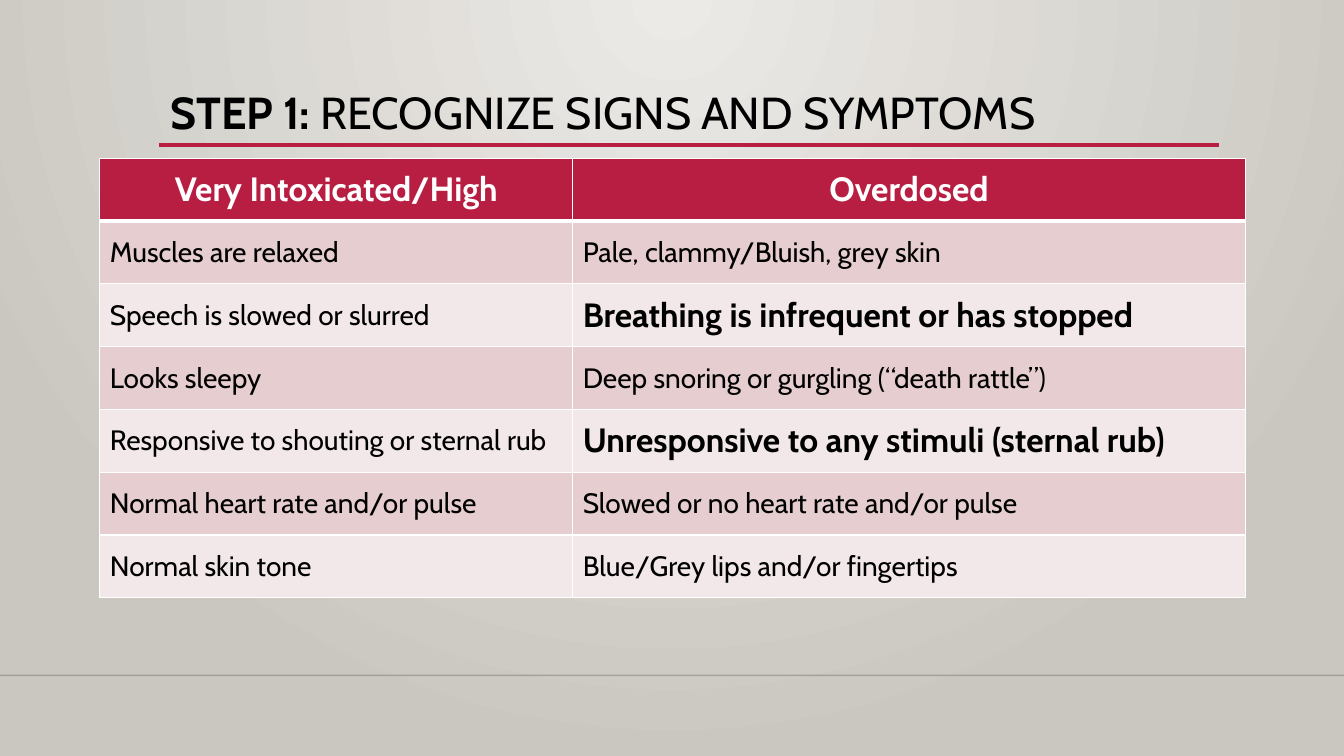
from lxml import etree
from pptx import Presentation
from pptx.dml.color import RGBColor
from pptx.enum import shapes, text
from pptx.oxml import ns
from pptx.util import Inches, Pt

FONT = "Cabin"
CRIMSON = "B71E42"
WHITE = "FFFFFF"
BLACK = "000000"
BAND_FILLS = ["E6CDCF", "F3E8E9"]
COLUMN_WIDTHS = [4.69, 6.67]
HEADINGS = ["Very Intoxicated/High", "Overdosed"]
SIGNS = [
    ("Muscles are relaxed", "Pale, clammy/Bluish, grey skin"),
    ("Speech is slowed or slurred", "Breathing is infrequent or has stopped"),
    ("Looks sleepy", "Deep snoring or gurgling (“death rattle”)"),
    ("Responsive to shouting or sternal rub", "Unresponsive to any stimuli (sternal rub)"),
    ("Normal heart rate and/or pulse", "Slowed or no heart rate and/or pulse"),
    ("Normal skin tone", "Blue/Grey lips and/or fingertips"),
]
CRITICAL_SIGNS = {SIGNS[1][1], SIGNS[3][1]}


def color(value):
    return RGBColor.from_string(value)


def format_font(font, size, value, bold=False):
    font.name = FONT
    font.size = Pt(size)
    font.bold = bold
    font.color.rgb = color(value)


def set_background(slide):
    fill = slide.background.fill
    fill.gradient()
    for stop, value in zip(fill.gradient_stops, ["ECEAE7", "CAC7C1"]):
        stop.color.rgb = color(value)
    gradient = next(slide.element.iter(ns.qn("a:gradFill")))
    gradient.remove(gradient.find(ns.qn("a:lin")))
    circle = etree.SubElement(gradient, ns.qn("a:path"), path="circle")
    etree.SubElement(circle, ns.qn("a:fillToRect"), l="43000", t="0", r="43000", b="100000")


def add_rule(slide, left, right, top, value, width, opacity=100):
    rule = slide.shapes.add_connector(
        shapes.MSO_CONNECTOR.STRAIGHT, Inches(left), Inches(top), Inches(right), Inches(top)
    )
    rule.line.color.rgb = color(value)
    rule.line.width = Pt(width)
    properties = rule._element.spPr
    if opacity < 100:
        solid = next(properties.iter(ns.qn("a:srgbClr")))
        etree.SubElement(solid, ns.qn("a:alpha"), val=str(opacity * 1000))
    etree.SubElement(properties, ns.qn("a:effectLst"))


def add_title(slide, step, heading):
    box = slide.shapes.add_textbox(Inches(1.59), Inches(0.52), Inches(10.5), Inches(0.91))
    frame = box.text_frame
    frame.word_wrap = True
    frame.vertical_anchor = text.MSO_ANCHOR.BOTTOM
    paragraph = frame.paragraphs[0]
    paragraph.line_spacing = 0.9
    for words, bold in [(step, True), (heading, False)]:
        run = paragraph.add_run()
        run.text = words
        format_font(run.font, 32, BLACK, bold)


def set_borders(cell, bottom_width):
    properties = cell._tc.get_or_add_tcPr()
    widths = {"a:lnL": 1, "a:lnR": 1, "a:lnT": 1, "a:lnB": bottom_width}
    for index, (tag, width) in enumerate(widths.items()):
        border = etree.Element(ns.qn(tag), w=str(Pt(width)))
        solid = etree.SubElement(border, ns.qn("a:solidFill"))
        etree.SubElement(solid, ns.qn("a:srgbClr"), val=WHITE)
        properties.insert(index, border)


def fill_cell(cell, words, fill, size, value, bold, bottom_width=1):
    cell.fill.solid()
    cell.fill.fore_color.rgb = color(fill)
    set_borders(cell, bottom_width)
    cell.vertical_anchor = text.MSO_ANCHOR.MIDDLE
    cell.text_frame.text = words
    format_font(cell.text_frame.paragraphs[0].runs[0].font, size, value, bold)


def add_signs_table(slide):
    table = slide.shapes.add_table(
        len(SIGNS) + 1, len(HEADINGS), Inches(0.99), Inches(1.57),
        Inches(sum(COLUMN_WIDTHS)), Inches(4.36)
    ).table
    table.first_row = True
    table.horz_banding = False
    for column, width in zip(table.columns, COLUMN_WIDTHS):
        column.width = Inches(width)
    for column, heading in enumerate(HEADINGS):
        cell = table.cell(0, column)
        fill_cell(cell, heading, CRIMSON, 24, WHITE, True, bottom_width=3)
        cell.text_frame.paragraphs[0].alignment = text.PP_ALIGN.CENTER
    for row, signs in enumerate(SIGNS):
        for column, sign in enumerate(signs):
            critical = sign in CRITICAL_SIGNS
            fill_cell(
                table.cell(row + 1, column), sign, BAND_FILLS[row % 2],
                24 if critical else 20, BLACK, critical
            )


def main():
    presentation = Presentation()
    presentation.slide_width = Inches(13.33)
    presentation.slide_height = Inches(7.5)
    slide = presentation.slides.add_slide(presentation.slide_layouts[6])
    set_background(slide)
    add_rule(slide, 0, 13.33, 6.7, "000001", 1, opacity=20)
    add_rule(slide, 1.58, 12.09, 1.44, CRIMSON, 2.5)
    add_title(slide, "STEP 1: ", "RECOGNIZE SIGNS AND SYMPTOMS")
    add_signs_table(slide)
    presentation.save("out.pptx")


if __name__ == "__main__":
    main()
